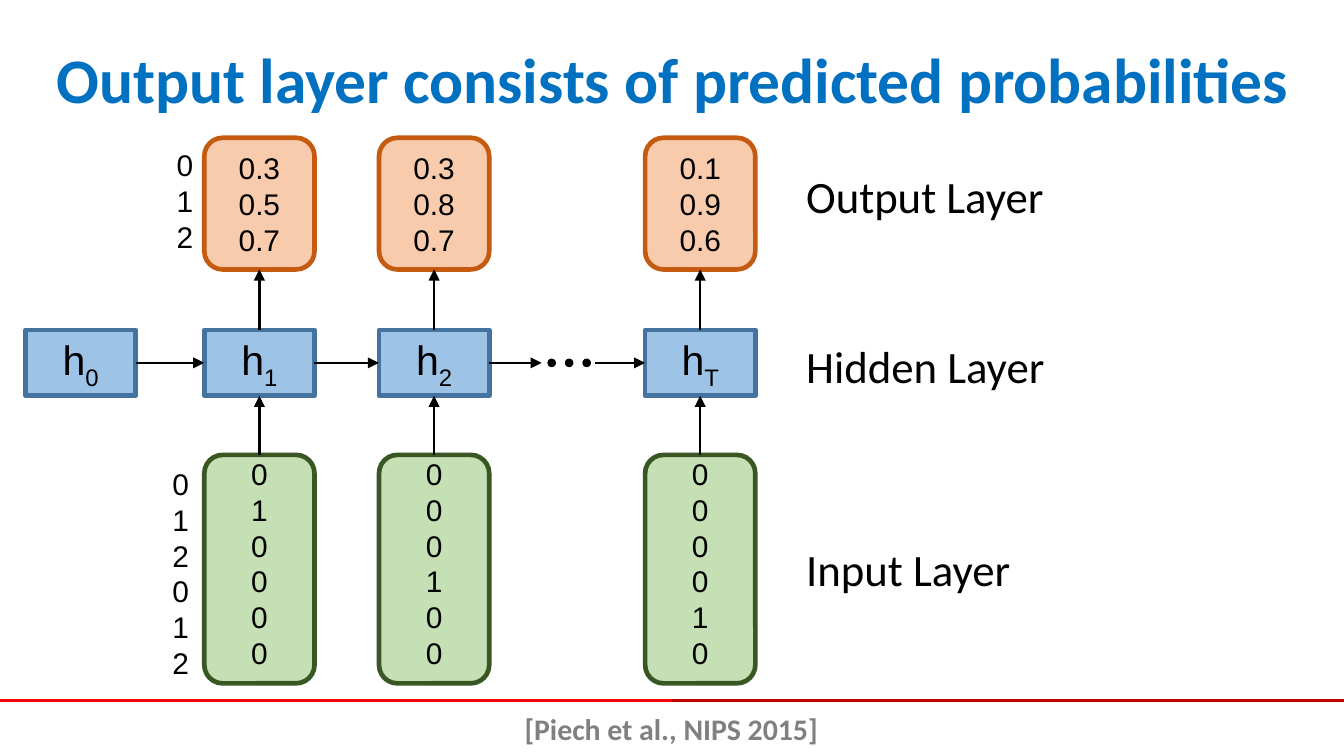
from collections import namedtuple
from itertools import pairwise

from lxml import etree
from pptx import Presentation
from pptx import util as u
from pptx.dml.color import RGBColor
from pptx.enum import shapes, text
from pptx.oxml import ns

CELL = u.Inches(0.1)
COLUMNS, ROWS = 100, 56.25

BLACK = RGBColor(0x00, 0x00, 0x00)
TITLE_BLUE = RGBColor(0x00, 0x70, 0xC0)
GREY = RGBColor(0x80, 0x80, 0x80)
RED = RGBColor(0xFF, 0x00, 0x00)
DARK_RED = RGBColor(0xC0, 0x00, 0x00)
BLUE_FILL = RGBColor(0x9D, 0xC3, 0xE6)
BLUE_LINE = RGBColor(0x43, 0x73, 0x9E)
GREEN_FILL = RGBColor(0xC5, 0xE0, 0xB4)
GREEN_LINE = RGBColor(0x38, 0x57, 0x23)
ORANGE_FILL = RGBColor(0xF8, 0xCB, 0xAD)
ORANGE_LINE = RGBColor(0xC5, 0x5A, 0x11)

Box = namedtuple("Box", "left top width height")
Style = namedtuple("Style", "kind fill line width")

HIDDEN = Style(shapes.MSO_SHAPE.RECTANGLE, BLUE_FILL, BLUE_LINE, 2.5)
INPUT = Style(shapes.MSO_SHAPE.ROUNDED_RECTANGLE, GREEN_FILL, GREEN_LINE, 2.5)
OUTPUT = Style(shapes.MSO_SHAPE.ROUNDED_RECTANGLE, ORANGE_FILL, ORANGE_LINE, 2.5)
DOT = Style(shapes.MSO_SHAPE.OVAL, BLACK, BLACK, 1)

VALUE_FONT = {"name": "Arial", "size": u.Pt(16)}
STATE_FONT = {"name": "Arial", "size": u.Pt(22)}
LABEL_FONT = {"name": "Calibri", "size": u.Pt(24)}
TITLE_FONT = {"name": "Calibri", "size": u.Pt(34), "bold": True}
SOURCE_FONT = {"name": "Calibri", "size": u.Pt(16), "bold": True}

NODE_WIDTH, NODE_HEIGHT = 8.2, 4.9
OUTPUT_HEIGHT, INPUT_HEIGHT = 9.8, 17
HIDDEN_ROW, INPUT_ROW = 14.3, 23.6
STEPS = [
    ("0", 0, None, None),
    ("1", 13.3, ["0.3", "0.5", "0.7"], "010000"),
    ("2", 26.3, ["0.3", "0.8", "0.7"], "000100"),
    ("T", 46.1, ["0.1", "0.9", "0.6"], "000010"),
]


def cells(*values):
    return [round(value * CELL) for value in values]


def inside(box, left, top, width, height):
    return Box(box.left + left, box.top + top, width, height)


def apply(target, values):
    for name, value in values.items():
        setattr(target, name, value)


def add_run(paragraph, words, font, color=BLACK):
    run = paragraph.add_run()
    run.text = words
    apply(run.font, font)
    run.font.color.rgb = color
    return run


def write(shape, lines, font, color=BLACK, align=text.PP_ALIGN.CENTER, **frame_format):
    frame = shape.text_frame
    apply(frame, {"word_wrap": True, **frame_format})
    for index, line in enumerate(lines):
        paragraph = frame.add_paragraph() if index else frame.paragraphs[0]
        paragraph.alignment = align
        add_run(paragraph, line, font, color)


def add_text(slide, box, lines, font, **options):
    write(slide.shapes.add_textbox(*cells(*box)), lines, font, **options)


def add_styled(slide, style, box):
    shape = slide.shapes.add_shape(style.kind, *cells(*box))
    shape.shadow.inherit = False
    shape.fill.solid()
    shape.fill.fore_color.rgb = style.fill
    shape.line.color.rgb = style.line
    shape.line.width = u.Pt(style.width)
    return shape


def add_line(slide, start, end, color, width):
    line = slide.shapes.add_connector(shapes.MSO_CONNECTOR.STRAIGHT, *cells(*start, *end))
    line.line.color.rgb = color
    line.line.width = u.Pt(width)
    etree.SubElement(line._element.spPr, ns.qn("a:effectLst"))
    return line


def add_arrow(slide, start=(0, 0), end=(0, 0), source=None, target=None):
    arrow = add_line(slide, start, end, BLACK, 1.25)
    etree.SubElement(arrow.line._get_or_add_ln(), ns.qn("a:tailEnd"), type="triangle")
    if source:
        arrow.begin_connect(*source)
    if target:
        arrow.end_connect(*target)


def add_title(slide, box):
    add_text(slide, box, ["Output layer consists of predicted probabilities"], TITLE_FONT,
             color=TITLE_BLUE, margin_left=0, margin_right=0,
             margin_top=u.Inches(0.3), margin_bottom=0)


def add_hidden_state(slide, box, subscript):
    node = add_styled(slide, HIDDEN, box)
    write(node, ["h"], STATE_FONT, vertical_anchor=text.MSO_ANCHOR.MIDDLE)
    run = add_run(node.text_frame.paragraphs[0], subscript, STATE_FONT)
    run.font._element.set("baseline", "-25000")
    return node


def add_values(slide, style, box, values, **frame_format):
    shape = add_styled(slide, style, box)
    write(shape, values, VALUE_FONT, vertical_anchor=text.MSO_ANCHOR.MIDDLE, **frame_format)
    return shape


def add_step(slide, box, subscript, outputs, inputs):
    node = add_hidden_state(slide, inside(box, 0, HIDDEN_ROW, box.width, NODE_HEIGHT), subscript)
    if outputs:
        output = add_values(slide, OUTPUT, inside(box, 0, 0, box.width, OUTPUT_HEIGHT), outputs)
        entry = add_values(slide, INPUT, inside(box, 0, INPUT_ROW, box.width, INPUT_HEIGHT),
                           inputs, margin_top=0, margin_bottom=u.Inches(0.09))
        add_arrow(slide, source=(node, 0), target=(output, 2))
        add_arrow(slide, source=(entry, 0), target=(node, 2))
    return node


def add_ellipsis(slide, box, before, after):
    middle = box.top + box.height / 2
    add_arrow(slide, source=(before, 3), end=(box.left, middle))
    for index in range(3):
        add_styled(slide, DOT, inside(box, 0.5 + 1.3 * index, box.height / 2 - 0.25, 0.5, 0.5))
    add_arrow(slide, start=(box.left + box.width, middle), target=(after, 1))


def add_network(slide, box):
    nodes = [
        add_step(slide, inside(box, column, 0, NODE_WIDTH, box.height), subscript, outputs, inputs)
        for subscript, column, outputs, inputs in STEPS
    ]
    for before, after in pairwise(nodes[:-1]):
        add_arrow(slide, source=(before, 3), target=(after, 1))
    add_ellipsis(slide, inside(box, 38.4, HIDDEN_ROW, 4, NODE_HEIGHT), *nodes[-2:])
    add_text(slide, inside(box, 9.4, 0.2, 4.9, 9.1), "012", VALUE_FONT)
    add_text(slide, inside(box, 9.1, 23.9, 4.9, 17.2), "012012", VALUE_FONT)


def add_layer_names(slide, box):
    for name, row in (("Output Layer", 0), ("Hidden Layer", 12.6), ("Input Layer", 27.7)):
        add_text(slide, inside(box, 0, row, box.width, 5), [name], LABEL_FONT,
                 align=text.PP_ALIGN.LEFT)


def add_footer(slide, box):
    middle = box.left + box.width / 2
    add_line(slide, (middle, box.top), (box.left + box.width, box.top), DARK_RED, 1.5)
    add_line(slide, (box.left, box.top), (middle, box.top), RED, 1.5)
    add_text(slide, inside(box, 37.9, 0.3, 24.1, 3.7), ["[Piech et al., NIPS 2015]"],
             SOURCE_FONT, color=GREY, word_wrap=False)


def main():
    presentation = Presentation()
    presentation.slide_width, presentation.slide_height = cells(COLUMNS, ROWS)
    slide = presentation.slides.add_slide(presentation.slide_layouts[6])
    add_title(slide, Box(3.5, 0, 93.1, 7.7))
    add_layer_names(slide, Box(59, 12.1, 21, 32.7))
    add_network(slide, Box(1.9, 10.25, 54.3, 40.6))
    add_footer(slide, Box(0, 52.1, COLUMNS, 4.15))
    presentation.save("out.pptx")


if __name__ == "__main__":
    main()
